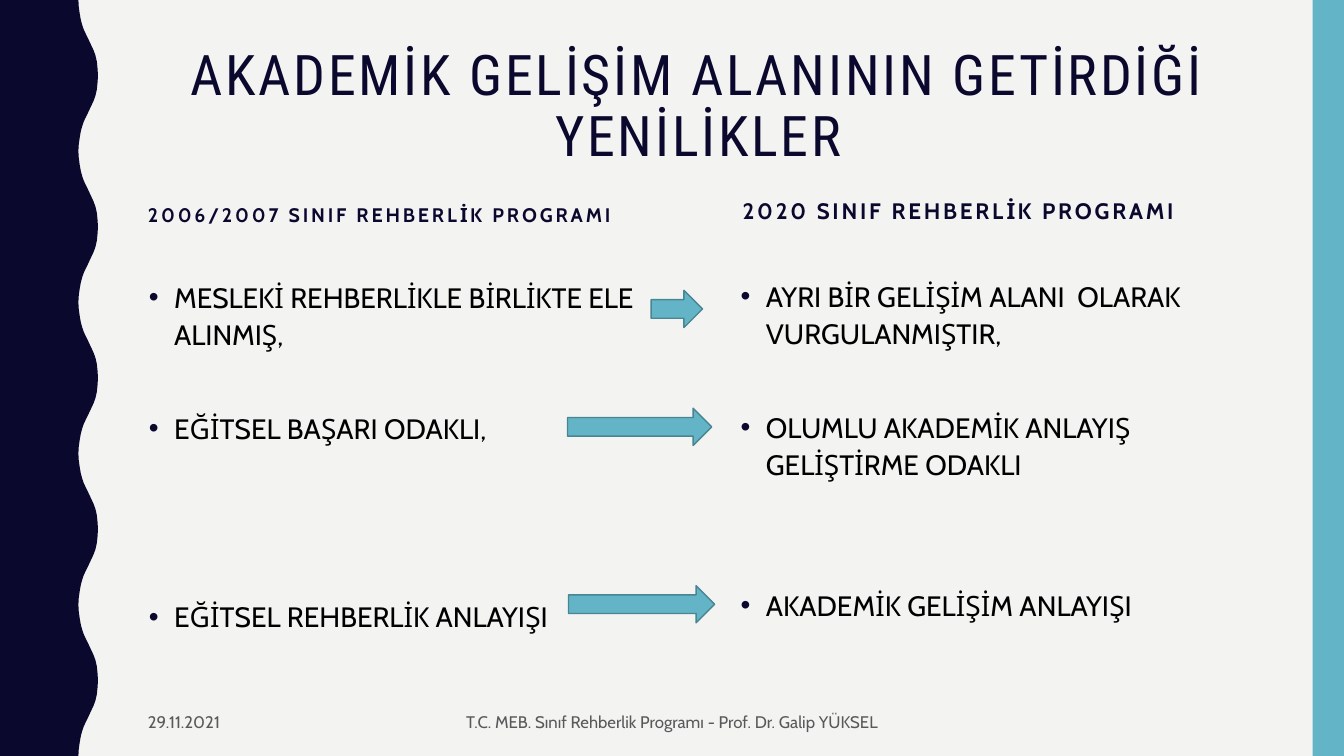
"""Slide comparing the academic development area in two class guidance programmes."""
from lxml import etree
from pptx import Presentation
from pptx.dml.color import RGBColor
from pptx.enum import shapes, text
from pptx.oxml import ns
from pptx.util import Pt

COLORS = {"navy": "0B082E", "teal": "62B4C6", "edge": "498592",
          "paper": "F3F3F2", "black": "000000", "grey": "595959"}
WIDTH, HEIGHT = 960, 540

TITLE = "AKADEMİK GELİŞİM ALANININ GETİRDİĞİ YENİLİKLER"
PROGRAMMES = [
    {"heading": "2006/2007 SINIF REHBERLİK PROGRAMI", "size": 14,
     "heading_box": (98.6, 126, 392.4, 39.6), "list_box": (99.3, 194.4, 378, 270.7),
     "points": [("MESLEKİ REHBERLİKLE BİRLİKTE ELE ALINMIŞ,", 0),
                ("EĞİTSEL BAŞARI ODAKLI,", 1),
                ("EĞİTSEL REHBERLİK ANLAYIŞI", 3)]},
    {"heading": "2020 SINIF REHBERLİK PROGRAMI", "size": 16,
     "heading_box": (523.4, 123.8, 378, 39.6), "list_box": (522, 193.7, 378, 271.4),
     "points": [("AYRI BİR GELİŞİM ALANI  OLARAK VURGULANMIŞTIR,", 0),
                ("OLUMLU AKADEMİK ANLAYIŞ GELİŞTİRME ODAKLI", 1),
                ("AKADEMİK GELİŞİM ANLAYIŞI", 2)]},
]
FOOTERS = [("29.11.2021", (98.6, 501.8, 183.6, 27.4), "LEFT"),
           ("T.C. MEB. Sınıf Rehberlik Programı - Prof. Dr. Galip YÜKSEL",
            (318.2, 501.8, 324, 27.4), "CENTER")]
ARROWS = [(465.1, 207.4, 36.7), (405.4, 291.6, 103), (406.1, 418.3, 104.4)]
ARROW_HEIGHT = 26.6

WAVE_PERIOD = 108
HALF_WAVE = [(56, 0), (56.3, 5), (57, 10), (57.8, 14.4), (58.8, 18), (59.8, 21),
             (61.2, 24), (62.7, 27), (64.1, 30), (65.5, 33), (66.9, 36),
             (68.2, 39.6), (69.2, 44), (69.7, 49), (70, 54)]

PARAGRAPH_GAP = 7
SKIPPED_LINE = 26.7 + PARAGRAPH_GAP


def rgb(name):
    return RGBColor.from_string(COLORS[name])


def paint(part, fill, edge=None):
    part.shadow.inherit = False
    part.fill.solid()
    part.fill.fore_color.rgb = rgb(fill)
    if edge:
        part.line.color.rgb = rgb(edge)
        part.line.width = Pt(1)
    else:
        part.line.fill.background()


def place(part, box):
    part.left, part.top, part.width, part.height = map(Pt, box)


def add_bullet(paragraph):
    props = paragraph._p.get_or_add_pPr()
    props.set("marL", str(Pt(18)))
    props.set("indent", str(Pt(-18)))
    tint = etree.SubElement(props, ns.qn("a:buClr"))
    etree.SubElement(tint, ns.qn("a:srgbClr"), val=COLORS["navy"])
    etree.SubElement(props, ns.qn("a:buFont"), typeface="Arial")
    etree.SubElement(props, ns.qn("a:buChar"), char="•")


def write(paragraph, words, size, color="navy", font="Cabin", bold=False,
          tracking=0, align="LEFT", before=0, line=1.0, bullet=False):
    paragraph.alignment = getattr(text.PP_ALIGN, align)
    paragraph.space_before = Pt(before)
    paragraph.line_spacing = line
    if bullet:
        add_bullet(paragraph)
    run = paragraph.add_run()
    run.text = words
    run.font.name = font
    run.font.size = Pt(size)
    run.font.bold = bold
    run.font.color.rgb = rgb(color)
    if tracking:
        run._r.get_or_add_rPr().set("spc", str(tracking * 100))


def add_frame(slide, box, anchor="TOP"):
    frame = slide.shapes.add_textbox(*map(Pt, box)).text_frame
    frame.word_wrap = True
    frame.vertical_anchor = getattr(text.MSO_ANCHOR, anchor)
    return frame


def draw_edges(slide):
    period = HALF_WAVE + [(x, WAVE_PERIOD - y) for x, y in HALF_WAVE[-2::-1]]
    wave = [(x, y + start) for start in range(0, HEIGHT, WAVE_PERIOD) for x, y in period]
    outline = [(Pt(x), Pt(y)) for x, y in wave + [(0, HEIGHT)]]
    builder = slide.shapes.build_freeform(0, 0)
    builder.add_line_segments(outline, close=True)
    paint(builder.convert_to_shape(), "navy")
    stripe = slide.shapes.add_shape(shapes.MSO_SHAPE.RECTANGLE,
                                    Pt(937.6), 0, Pt(22.4), Pt(HEIGHT))
    paint(stripe, "teal")


def main():
    deck = Presentation()
    deck.slide_width, deck.slide_height = Pt(WIDTH), Pt(HEIGHT)
    slide = deck.slides.add_slide(deck.slide_layouts[5])
    slide.background.fill.solid()
    slide.background.fill.fore_color.rgb = rgb("paper")
    draw_edges(slide)

    title = slide.shapes.title
    place(title, (98.6, 30.2, 800.6, 60.5))
    title.text_frame.word_wrap = True
    title.text_frame.auto_size = text.MSO_AUTO_SIZE.NONE
    title.text_frame.vertical_anchor = text.MSO_ANCHOR.TOP
    write(title.text_frame.paragraphs[0], TITLE, 40, font="Roboto Condensed",
          tracking=2, align="CENTER", line=0.9)

    for programme in PROGRAMMES:
        heading = add_frame(slide, programme["heading_box"], "BOTTOM")
        write(heading.paragraphs[0], programme["heading"], programme["size"],
              bold=True, tracking=2, before=PARAGRAPH_GAP)
        points = add_frame(slide, programme["list_box"])
        for index, (words, skipped) in enumerate(programme["points"]):
            paragraph = points.add_paragraph() if index else points.paragraphs[0]
            write(paragraph, words, 20, color="black", line=1.1, bullet=True,
                  before=PARAGRAPH_GAP + skipped * SKIPPED_LINE)

    for words, box, align in FOOTERS:
        footer = add_frame(slide, box, "MIDDLE")
        write(footer.paragraphs[0], words, 12, color="grey", align=align)

    for left, top, length in ARROWS:
        arrow = slide.shapes.add_shape(shapes.MSO_SHAPE.RIGHT_ARROW, Pt(left), Pt(top),
                                       Pt(length), Pt(ARROW_HEIGHT))
        paint(arrow, "teal", "edge")

    deck.save("out.pptx")


if __name__ == "__main__":
    main()
